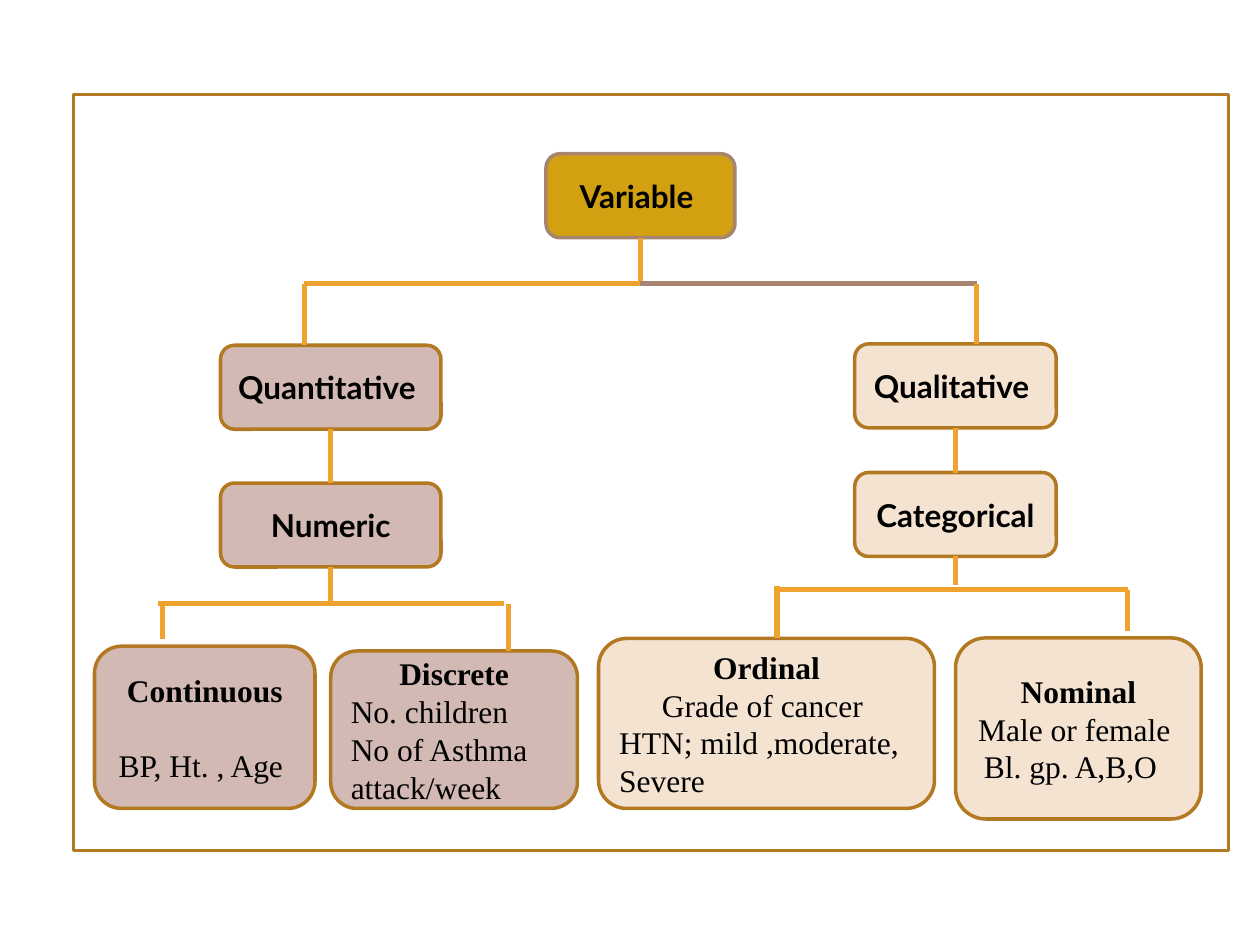
from lxml import etree
from pptx import Presentation
from pptx.dml.color import RGBColor
from pptx.enum.shapes import MSO_CONNECTOR, MSO_SHAPE
from pptx.enum.text import MSO_ANCHOR, PP_ALIGN
from pptx.oxml.ns import qn
from pptx.util import Inches, Pt

ROUNDED = MSO_SHAPE.FLOWCHART_ALTERNATE_PROCESS
PLAIN = MSO_SHAPE.FLOWCHART_PROCESS
STRAIGHT = MSO_CONNECTOR.STRAIGHT
CENTER, LEFT = PP_ALIGN.CENTER, PP_ALIGN.LEFT
TOP, BOTTOM = 0, 2

COLORS = {"gold": "D2A010", "rose": "D3B9B3", "cream": "F5E3D1", "brown": "B27822",
          "taupe": "A78470", "orange": "F0A22E", "text": "000000"}
HEAD_FONT, BODY_FONT = "Lato", "Times New Roman"

# Grid: 120 columns by 90 rows on a 10 x 7.5 inch slide
SLIDE_W, SLIDE_H = Inches(10), Inches(7.5)
COLS, ROWS = 120, 90
FRAME = (7, 9, 110, 72)

# Boxes: name -> (column, row, columns wide, rows high), fill, outline
BOXES = {
    "Variable": ((52, 14.64, 18, 8), "gold", "taupe"),
    "Quantitative": ((21, 32.88, 21, 8), "rose", "brown"),
    "Qualitative": ((81.4, 32.75, 19.2, 8), "cream", "brown"),
    "Numeric": ((21, 46, 21, 8), "rose", "brown"),
    "Categorical": ((81.4, 45, 19.2, 8), "cream", "brown"),
    "Continuous": ((9, 61.55, 21, 15.45), "rose", "brown"),
    "Discrete": ((31.5, 62, 23.5, 15), "rose", "brown"),
    "Ordinal": ((57, 60.8, 32, 16.2), "cream", "brown"),
    "Nominal": ((91, 60.75, 23.4, 17.25), "cream", "brown"),
}
# Trailing spaces shift the centred wording slightly to the left
HEADINGS = {"Variable": "Variable ", "Quantitative": "Quantitative ",
            "Qualitative": "Qualitative  "}
# Examples under each leaf: text, alignment, space before in points
EXAMPLES = {
    "Continuous": [("BP, Ht. , Age  ", CENTER, 21)],
    "Discrete": [("No. children", LEFT, 0), ("No of Asthma attack/week", LEFT, 0)],
    "Ordinal": [("Grade of cancer ", CENTER, 0),
                ("HTN; mild ,moderate, Severe", LEFT, 0)],
    "Nominal": [("Male or female ", CENTER, 0), ("Bl. gp. A,B,O  ", CENTER, 0)],
}

# Stems leave a box's bottom for another box's top, or for a grid row
STEMS = [("Variable", 27), ("Quantitative", "Numeric"), ("Qualitative", "Categorical"),
         ("Numeric", 57.4), ("Categorical", 55.7)]
# Branches: row, middle column, left and right ends, colour of the right half
BRANCHES = [(27, 61, 29, 93, "taupe"), (57.5, 31.5, 15, 48, "orange"),
            (56.15, 91, 74, 107.4, "orange")]
# Drops: column, first row, last row
DROPS = [(29, 27, 32.88), (93, 27, 32.75), (15.5, 57.5, 60.85), (48.4, 57.5, 62),
         (74, 55.8, 60.8), (107.4, 56.15, 60.1)]


def x(col):
    return round(SLIDE_W * col / COLS)


def y(row):
    return round(SLIDE_H * row / ROWS)


def rgb(name):
    return RGBColor.from_string(COLORS[name])


def add_box(slide, kind, cell, fill, outline):
    col, row, wide, high = cell
    box = slide.shapes.add_shape(kind, x(col), y(row), x(wide), y(high))
    box.shadow.inherit = False
    if fill:
        box.fill.solid()
        box.fill.fore_color.rgb = rgb(fill)
    else:
        box.fill.background()
    box.line.color.rgb = rgb(outline)
    box.line.width = Pt(2)
    return box


def write(box, lines, font):
    frame = box.text_frame
    frame.word_wrap = True
    frame.vertical_anchor = MSO_ANCHOR.MIDDLE
    for i, (text, align, gap) in enumerate(lines):
        para = frame.paragraphs[0] if i == 0 else frame.add_paragraph()
        para.alignment = align
        para.space_before = Pt(gap)
        run = para.add_run()
        run.text = text
        for key, value in {"name": font, "size": Pt(18), "bold": i == 0}.items():
            setattr(run.font, key, value)
        run.font.color.rgb = rgb("text")


def add_line(slide, start, end, color="orange"):
    line = slide.shapes.add_connector(STRAIGHT, x(start[0]), y(start[1]),
                                      x(end[0]), y(end[1]))
    line.line.color.rgb = rgb(color)
    line.line.width = Pt(3)
    etree.SubElement(line._element.spPr, qn("a:effectLst"))
    return line


def main():
    prs = Presentation()
    prs.slide_width, prs.slide_height = SLIDE_W, SLIDE_H
    slide = prs.slides.add_slide(prs.slide_layouts[6])

    # Frame and boxes
    add_box(slide, PLAIN, FRAME, None, "brown")
    shapes = {}
    for name, (cell, fill, outline) in BOXES.items():
        shapes[name] = add_box(slide, ROUNDED, cell, fill, outline)
        lines = [(HEADINGS.get(name, name), CENTER, 0)] + EXAMPLES.get(name, [])
        write(shapes[name], lines, BODY_FONT if name in EXAMPLES else HEAD_FONT)

    # Stems
    for parent, target in STEMS:
        col, row, wide, high = BOXES[parent][0]
        middle = col + wide / 2
        end_row = BOXES[target][0][1] if target in BOXES else target
        stem = add_line(slide, (middle, row + high), (middle, end_row))
        stem.begin_connect(shapes[parent], BOTTOM)
        if target in BOXES:
            stem.end_connect(shapes[target], TOP)

    # Branches and drops
    for row, middle, left, right, right_color in BRANCHES:
        add_line(slide, (middle, row), (left, row))
        add_line(slide, (middle, row), (right, row), right_color)
    for col, first, last in DROPS:
        add_line(slide, (col, first), (col, last))

    prs.save("out.pptx")


if __name__ == "__main__":
    main()
